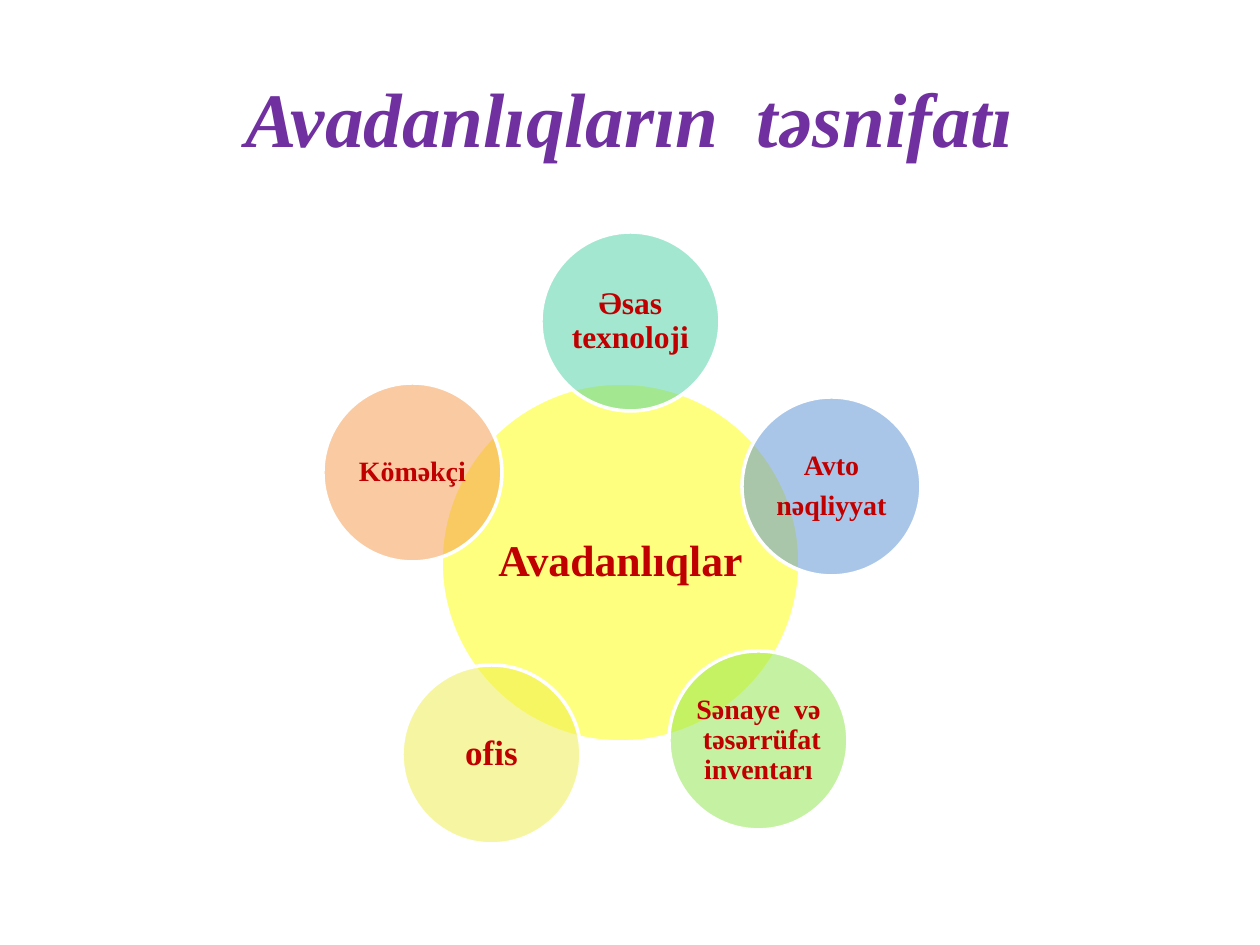
from dataclasses import dataclass

from lxml.etree import SubElement
from pptx import Presentation
from pptx.dml.color import RGBColor
from pptx.enum.shapes import MSO_SHAPE
from pptx.enum.text import MSO_ANCHOR, PP_ALIGN
from pptx.oxml.ns import qn
from pptx.util import Emu, Pt


@dataclass(frozen=True)
class Theme:
    font: str = "Times New Roman"
    title: str = "7030A0"
    label: str = "C00000"
    outline: str = "FFFFFF"
    hub: str = "FFFF00"
    teal: str = "49D1A3"
    blue: str = "558ED5"
    green: str = "8DE646"
    lemon: str = "EEEF46"
    orange: str = "F79646"
    title_size: int = 44
    hub_size: int = 25
    large_size: int = 20
    medium_size: int = 18
    small_size: int = 16


theme = Theme()


def px(length):
    return Emu(round(length * 914400 / 126))


def format_text(frame, size, color, italic=False):
    """Centre the text in both directions and style every run."""
    frame.word_wrap = True
    frame.vertical_anchor = MSO_ANCHOR.MIDDLE
    for para in frame.paragraphs:
        para.alignment = PP_ALIGN.CENTER
        for span in para.runs:
            span.font.name = theme.font
            span.font.size = Pt(size)
            span.font.bold = True
            span.font.italic = italic
            span.font.color.rgb = RGBColor.from_string(color)


deck = Presentation()
deck.slide_width, deck.slide_height = px(1260), px(945)
page = deck.slides.add_slide(deck.slide_layouts[5])

title = page.shapes.title
title.left, title.top, title.width, title.height = px(63), px(38), px(1134), px(158)
title.text_frame.text = "Avadanlıqların  təsnifatı"
format_text(title.text_frame, theme.title_size, theme.title, italic=True)

HUB, SATELLITE = 359, 179
circles = [
    (441, 383, HUB, theme.hub, theme.hub_size, "Avadanlıqlar"),
    (541, 232, SATELLITE, theme.teal, theme.medium_size, "Əsas texnoloji"),
    (742, 397, SATELLITE, theme.blue, theme.small_size, "Avto\nnəqliyyat"),
    (669, 651, SATELLITE, theme.green, theme.small_size, "Sənaye  və  təsərrüfat inventarı"),
    (402, 665, SATELLITE, theme.lemon, theme.large_size, "ofis"),
    (323, 383, SATELLITE, theme.orange, theme.small_size, "Köməkçi"),
]

for left, top, diameter, color, size, label in circles:
    circle = page.shapes.add_shape(
        MSO_SHAPE.OVAL, px(left), px(top), px(diameter), px(diameter))
    circle.shadow.inherit = False
    circle.fill.solid()
    circle.fill.fore_color.rgb = RGBColor.from_string(color)
    solid_color = circle.fill._xPr.find(qn("a:solidFill"))[0]
    SubElement(solid_color, qn("a:alpha"), val="50000")
    circle.line.color.rgb = RGBColor.from_string(theme.outline)
    circle.line.width = Pt(2)

    frame = circle.text_frame
    frame.margin_left = frame.margin_right = frame.margin_top = frame.margin_bottom = 0
    frame.text = label
    format_text(frame, size, theme.label)
    for para in frame.paragraphs:
        para.line_spacing = 0.9
    for para in frame.paragraphs[:-1]:
        para.space_after = Pt(6)

deck.save("out.pptx")
